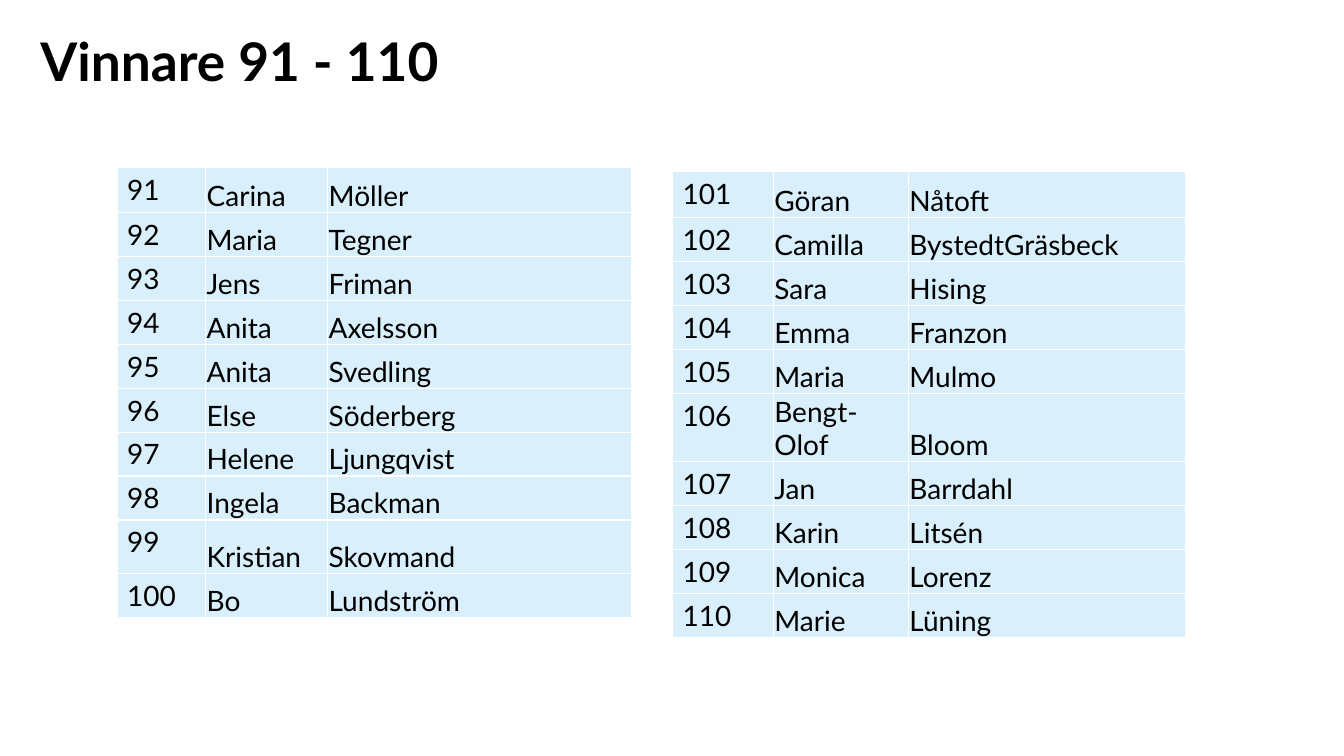
from lxml import etree
from pptx import Presentation
from pptx.dml.color import RGBColor
from pptx.enum import text
from pptx.oxml import ns
from pptx.util import Inches, Pt

FONT = "Lato"
COLORS = {"text": "000000", "cell": "D9EFFC", "border": "FFFFFF"}
ROW_HEIGHT = 0.41

LEFT_WINNERS = [
    ("Carina", "Möller"), ("Maria", "Tegner"), ("Jens", "Friman"),
    ("Anita", "Axelsson"), ("Anita", "Svedling"), ("Else", "Söderberg"),
    ("Helene", "Ljungqvist"), ("Ingela", "Backman"),
    ("Kristian", "Skovmand"), ("Bo", "Lundström"),
]
RIGHT_WINNERS = [
    ("Göran", "Nåtoft"), ("Camilla", "BystedtGräsbeck"), ("Sara", "Hising"),
    ("Emma", "Franzon"), ("Maria", "Mulmo"), ("Bengt-Olof", "Bloom"),
    ("Jan", "Barrdahl"), ("Karin", "Litsén"), ("Monica", "Lorenz"),
    ("Marie", "Lüning"),
]


def format_runs(paragraph, size, bold=False):
    for run in paragraph.runs:
        run.font.name = FONT
        run.font.size = Pt(size)
        run.font.bold = bold
        run.font.color.rgb = RGBColor.from_string(COLORS["text"])


def set_title(slide, title_text):
    title = slide.shapes.title
    title.left, title.top = Inches(0.4), Inches(0)
    title.width, title.height = Inches(11.27), Inches(1.66)
    frame = title.text_frame
    frame.text = title_text
    frame.auto_size = text.MSO_AUTO_SIZE.NONE
    frame.vertical_anchor = text.MSO_ANCHOR.TOP
    frame.margin_left = frame.margin_right = frame.margin_bottom = 0
    frame.margin_top = Inches(0.28)
    frame.paragraphs[0].alignment = text.PP_ALIGN.LEFT
    format_runs(frame.paragraphs[0], 38, bold=True)


def add_borders(cell):
    """Put a thin border on all four sides, ahead of the cell's fill."""
    properties = cell._tc.get_or_add_tcPr()
    for position, side in enumerate(("lnL", "lnR", "lnT", "lnB")):
        line = etree.Element(ns.qn(f"a:{side}"), w=str(Pt(1)))
        fill = etree.SubElement(line, ns.qn("a:solidFill"))
        etree.SubElement(fill, ns.qn("a:srgbClr"), val=COLORS["border"])
        properties.insert(position, line)


def fill_cell(cell, value, is_name):
    cell.text = value
    format_runs(cell.text_frame.paragraphs[0], 20)
    if is_name:
        cell.vertical_anchor = text.MSO_ANCHOR.BOTTOM
        cell.margin_left = cell.margin_right = cell.margin_top = Inches(0.01)
        cell.margin_bottom = 0
    cell.fill.solid()
    cell.fill.fore_color.rgb = RGBColor.from_string(COLORS["cell"])
    add_borders(cell)


def add_winner_table(slide, winners, first_number, box, column_widths, special_heights):
    """Number the winners; special_heights maps a row index to its own height."""
    frame = slide.shapes.add_table(len(winners), 3, *map(Inches, box))
    table = frame.table
    table.first_row = table.horz_banding = False
    for column, width in zip(table.columns, column_widths):
        column.width = Inches(width)
    for index, winner in enumerate(winners):
        table.rows[index].height = Inches(special_heights.get(index, ROW_HEIGHT))
        for column, value in enumerate((str(first_number + index), *winner)):
            fill_cell(table.cell(index, column), value, is_name=column > 0)
    frame.height = Inches(box[3])


def main():
    presentation = Presentation()
    presentation.slide_width = Inches(13.33)
    presentation.slide_height = Inches(7.5)
    slide = presentation.slides.add_slide(presentation.slide_layouts[5])
    set_title(slide, "Vinnare 91 - 110")
    add_winner_table(slide, LEFT_WINNERS, 91, (1.16, 1.66, 5.09, 4.44),
                     (0.88, 1.21, 3.01), {0: 0.45, 8: 0.53, 9: 0.23})
    add_winner_table(slide, RIGHT_WINNERS, 101, (6.67, 1.7, 5.09, 4.36),
                     (1, 1.34, 2.75), {0: 0.46})
    presentation.save("out.pptx")


if __name__ == "__main__":
    main()
